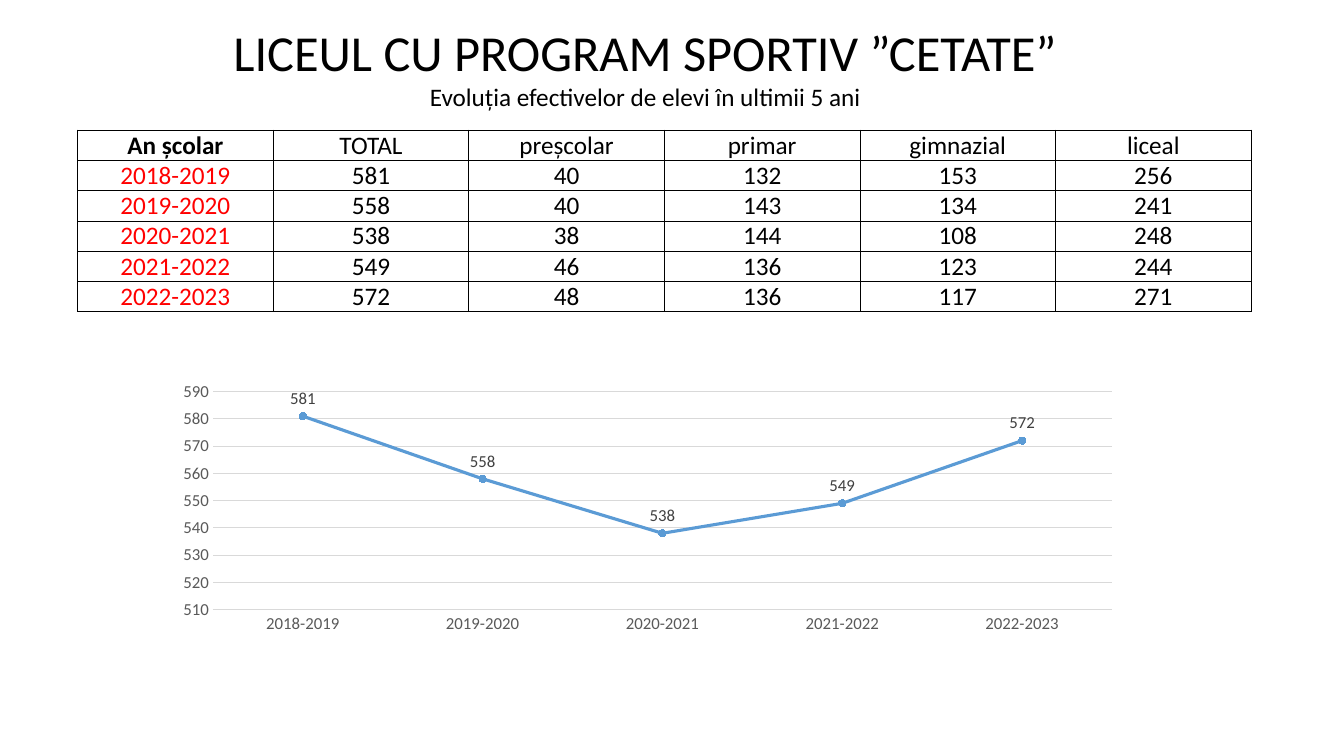
from pptx import Presentation
from pptx.chart.data import CategoryChartData
from pptx.dml.color import RGBColor
from pptx.enum.chart import (XL_CHART_TYPE, XL_LABEL_POSITION,
                             XL_MARKER_STYLE, XL_TICK_MARK)
from pptx.enum.text import MSO_ANCHOR, MSO_AUTO_SIZE, PP_ALIGN
from pptx.oxml import parse_xml
from pptx.oxml.ns import nsdecls
from pptx.util import Inches, Pt

FONT = "Calibri"
COLORS = {"ink": "000000", "year": "FF0000", "line": "5B9BD5",
          "grid": "D9D9D9", "axis": "595959", "label": "404040"}
HEADS = ["An școlar", "TOTAL", "preșcolar", "primar", "gimnazial", "liceal"]
ROWS = [
    ["2018-2019", 581, 40, 132, 153, 256],
    ["2019-2020", 558, 40, 143, 134, 241],
    ["2020-2021", 538, 38, 144, 108, 248],
    ["2021-2022", 549, 46, 136, 123, 244],
    ["2022-2023", 572, 48, 136, 117, 271],
]


def color(name):
    return RGBColor.from_string(COLORS[name])


def set_font(font, size, name="ink", bold=False):
    font.name = FONT
    font.size = Pt(size)
    font.bold = bold
    font.color.rgb = color(name)


def set_line(line, name, width):
    line.color.rgb = color(name)
    line.width = Pt(width)


def add_run(para, text, size, name="ink", bold=False):
    para.alignment = PP_ALIGN.CENTER
    run = para.add_run()
    run.text = text
    set_font(run.font, size, name, bold)


def add_title(slide, lines):
    box = slide.shapes.add_textbox(
        Inches(2.17), Inches(0.16), Inches(8.46), Inches(1.01))
    frame = box.text_frame
    frame.word_wrap = False
    frame.auto_size = MSO_AUTO_SIZE.SHAPE_TO_FIT_TEXT
    for i, (text, size) in enumerate(lines):
        para = frame.add_paragraph() if i else frame.paragraphs[0]
        add_run(para, text, size)


def add_edges(cell):
    props = cell._tc.get_or_add_tcPr()
    for i, side in enumerate(("lnL", "lnR", "lnT", "lnB")):
        props.insert(i, parse_xml(
            f'<a:{side} {nsdecls("a")} w="{Pt(0.5)}"><a:solidFill>'
            f'<a:srgbClr val="{COLORS["ink"]}"/></a:solidFill></a:{side}>'))


def fill_cell(cell, text, name, bold):
    cell.margin_left = cell.margin_right = 0
    cell.margin_top = cell.margin_bottom = 0
    cell.vertical_anchor = MSO_ANCHOR.BOTTOM
    cell.fill.background()
    add_edges(cell)
    add_run(cell.text_frame.paragraphs[0], text, 18, name, bold)


def add_grid(slide, rows):
    frame = slide.shapes.add_table(
        len(rows), len(HEADS), Inches(0.77), Inches(1.29),
        Inches(11.64), Inches(1.8))
    table = frame.table
    table.first_row = table.horz_banding = False
    for r, row in enumerate(rows):
        for c, value in enumerate(row):
            name = "year" if r and c == 0 else "ink"
            fill_cell(table.cell(r, c), str(value), name, r == c == 0)


def set_axis(axis):
    axis.major_tick_mark = axis.minor_tick_mark = XL_TICK_MARK.NONE
    set_font(axis.tick_labels.font, 12, "axis")


def set_plot(chart, x, y, w, h):
    area = chart._chartSpace.chart.plotArea
    for old in area.findall("{*}layout"):
        area.remove(old)
    sizes = "".join(f'<c:{tag} val="{val}"/>'
                    for tag, val in zip("xywh", (x, y, w, h)))
    area.insert(0, parse_xml(
        f'<c:layout {nsdecls("c")}><c:manualLayout>'
        '<c:layoutTarget val="inner"/><c:xMode val="edge"/>'
        f'<c:yMode val="edge"/>{sizes}</c:manualLayout></c:layout>'))


def style_series(series):
    series.smooth = False
    set_line(series.format.line, "line", 2.25)
    mark = series.marker
    mark.style = XL_MARKER_STYLE.CIRCLE
    mark.size = 5
    mark.format.fill.solid()
    mark.format.fill.fore_color.rgb = color("line")
    set_line(mark.format.line, "line", 0.75)
    labels = series.data_labels
    labels.show_value = True
    labels.position = XL_LABEL_POSITION.ABOVE
    set_font(labels.font, 12, "label")


def add_trend(slide, rows):
    data = CategoryChartData()
    data.categories = [row[0] for row in rows]
    data.add_series("Series 1", [row[1] for row in rows])
    chart = slide.shapes.add_chart(
        XL_CHART_TYPE.LINE_MARKERS, Inches(1.26), Inches(3.4),
        Inches(10.02), Inches(3), data).chart
    chart.has_title = chart.has_legend = False
    set_font(chart.font, 12)
    chart.plots[0].vary_by_categories = False
    style_series(chart.plots[0].series[0])

    # Axes
    years, totals = chart.category_axis, chart.value_axis
    set_axis(years)
    set_axis(totals)
    set_line(years.format.line, "grid", 0.75)
    totals.format.line.fill.background()
    set_line(totals.major_gridlines.format.line, "grid", 0.75)
    totals.minimum_scale, totals.maximum_scale = 510, 590
    totals.major_unit = 10
    set_plot(chart, 0.085, 0.162, 0.89, 0.721)


def main():
    deck = Presentation()
    deck.slide_width, deck.slide_height = Inches(13.33), Inches(7.5)
    slide = deck.slides.add_slide(deck.slide_layouts[6])

    # Heading
    add_title(slide, [
        ("LICEUL CU PROGRAM SPORTIV ”CETATE”", 36),
        ("Evoluția efectivelor de elevi în ultimii 5 ani", 18)])
    # Pupils by year and level
    add_grid(slide, [HEADS] + ROWS)
    # Total by year
    add_trend(slide, ROWS)

    deck.save("out.pptx")


if __name__ == "__main__":
    main()
